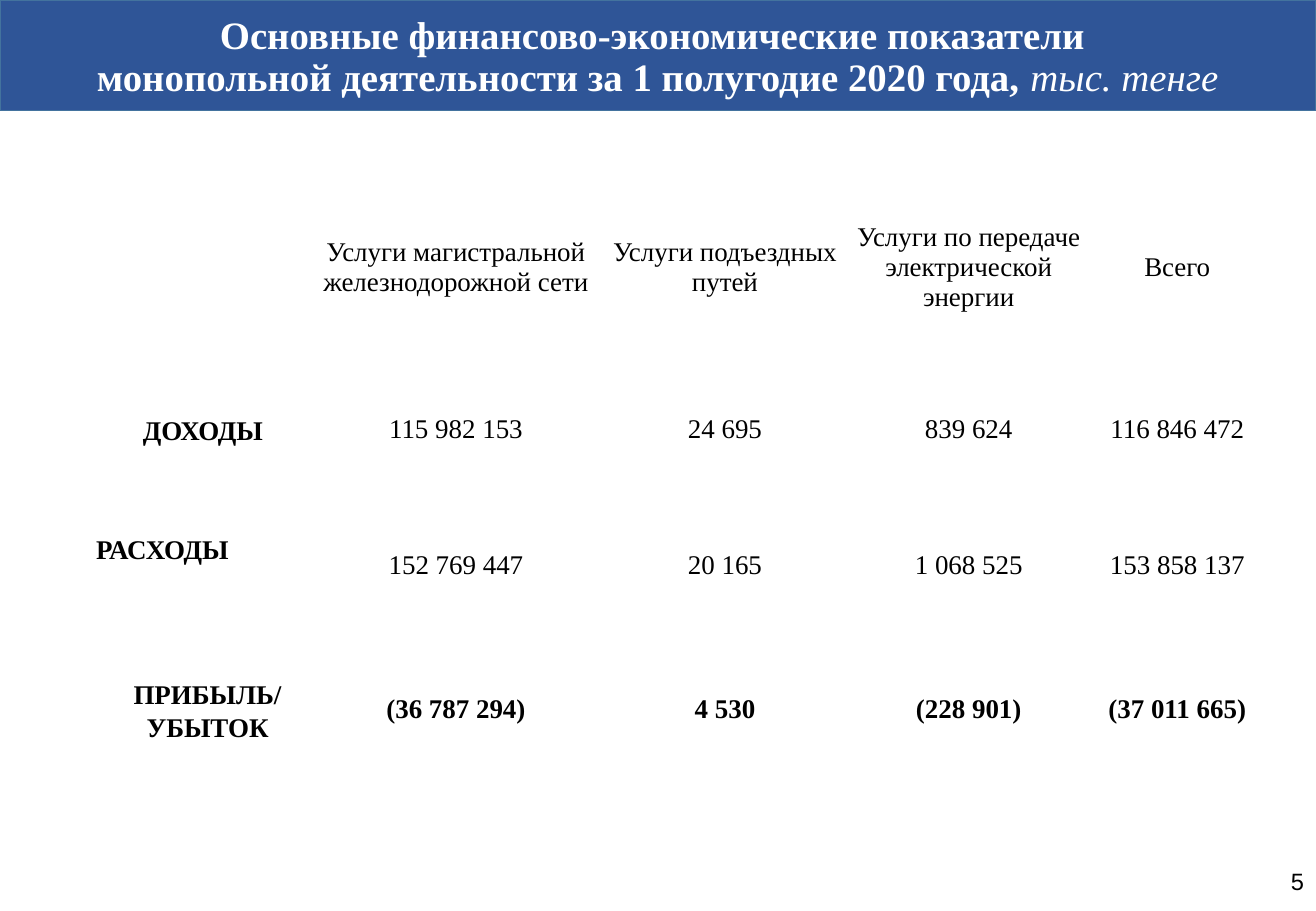
from pptx import Presentation
from pptx.dml.color import RGBColor
from pptx.enum import shapes, text
from pptx.util import Cm, Pt

BLUE = RGBColor(0x2F, 0x55, 0x97)
EDGE = RGBColor(0x43, 0x73, 0x9E)
WHITE = RGBColor(0xFF, 0xFF, 0xFF)
BLACK = RGBColor(0, 0, 0)
SERIF = "Times New Roman"

HEADING = [
    [("Основные финансово-экономические показатели ", False)],
    [("монопольной деятельности за 1 полугодие 2020 года, ", False), ("тыс. тенге", True)],
]
INDICATORS = [
    ("", "Услуги магистральной железнодорожной сети", "Услуги подъездных путей",
     "Услуги по передаче электрической энергии", "Всего"),
    ("", "115 982 153", "24 695", "839 624", "116 846 472"),
    ("РАСХОДЫ", "152 769 447", "20 165", "1 068 525", "153 858 137"),
    ("", "(36 787 294)", "4 530", "(228 901)", "(37 011 665)"),
]
COLUMN_WIDTHS = (4.78, 5.84, 5.41, 4.78, 3.94)
ROW_HEIGHTS = (4.11, 2.69, 2.97, 3.07)
PROFIT_ROW = 3
CENTER, LEFT, RIGHT = text.PP_ALIGN.CENTER, text.PP_ALIGN.LEFT, text.PP_ALIGN.RIGHT
LABELS = [
    (("ПРИБЫЛЬ/", "УБЫТОК"), (2.51, 14.05, 3.66, 1.63), CENTER, SERIF, 16, True),
    (("ДОХОДЫ",), (2.74, 8.53, 3.05, 0.94), LEFT, SERIF, 16, True),
    (("5",), (25.76, 18.01, 1.75, 1.02), RIGHT, "Arial", 14, False),
]


def style(paragraph, align, face, size, color, bold):
    paragraph.alignment = align
    font = paragraph.font
    font.name, font.size, font.bold = face, Pt(size), bold
    font.color.rgb = color


def set_margins(holder, left, top, right, bottom):
    holder.margin_left, holder.margin_top = Cm(left), Cm(top)
    holder.margin_right, holder.margin_bottom = Cm(right), Cm(bottom)


def add_heading(slide, slide_width):
    heading = slide.shapes.title
    band = slide.shapes.add_shape(shapes.MSO_SHAPE.RECTANGLE, 0, 0, slide_width, Cm(2.31))
    band.shadow.inherit = False
    band.fill.solid()
    band.fill.fore_color.rgb = BLUE
    band.line.color.rgb = EDGE
    band.line.width = Pt(1)
    heading.element.addprevious(band.element)

    heading.left, heading.top, heading.width, heading.height = Cm(0.2), Cm(0.08), Cm(27.1), Cm(1.96)
    frame = heading.text_frame
    frame.auto_size = text.MSO_AUTO_SIZE.NONE
    frame.vertical_anchor = text.MSO_ANCHOR.MIDDLE
    set_margins(frame, 0, 0.3, 0, 0)
    for index, pieces in enumerate(HEADING):
        line = frame.add_paragraph() if index else frame.paragraphs[0]
        line.line_spacing = 0.9
        line.space_before = Pt(0)
        style(line, CENTER, SERIF, 23, WHITE, True)
        for wording, is_unit in pieces:
            run = line.add_run()
            run.text = wording
            if is_unit:
                run.font.bold, run.font.italic = False, True


def add_indicators(slide):
    indicators = slide.shapes.add_table(
        len(ROW_HEIGHTS), len(COLUMN_WIDTHS), Cm(1.83), Cm(3.53),
        Cm(sum(COLUMN_WIDTHS)), Cm(sum(ROW_HEIGHTS))).table
    indicators.first_row = indicators.horz_banding = False
    for column, width in zip(indicators.columns, COLUMN_WIDTHS):
        column.width = Cm(width)
    for r, (values, height) in enumerate(zip(INDICATORS, ROW_HEIGHTS)):
        indicators.rows[r].height = Cm(height)
        for c, value in enumerate(values):
            cell = indicators.cell(r, c)
            cell.fill.solid()
            cell.fill.fore_color.rgb = WHITE
            cell.vertical_anchor = text.MSO_ANCHOR.MIDDLE
            is_label = c == 0
            if is_label:
                set_margins(cell, 0.18, 0, 0, 0.63)
            else:
                set_margins(cell, 0, 0, 0, 0)
            cell.text = value
            style(cell.text_frame.paragraphs[0], LEFT if is_label else CENTER,
                  SERIF, 16, BLACK, is_label or r == PROFIT_ROW)


def add_label(slide, lines, place, align, face, size, bold):
    frame = slide.shapes.add_textbox(*map(Cm, place)).text_frame
    frame.word_wrap = True
    frame.text = "\n".join(lines)
    for line in frame.paragraphs:
        style(line, align, face, size, BLACK, bold)


def main():
    """Build the slide of half-year financial indicators."""
    deck = Presentation()
    deck.slide_width, deck.slide_height = Cm(27.51), Cm(19.05)
    slide = deck.slides.add_slide(deck.slide_layouts[5])
    add_heading(slide, deck.slide_width)
    add_indicators(slide)
    for label in LABELS:
        add_label(slide, *label)
    deck.save("out.pptx")


if __name__ == "__main__":
    main()
